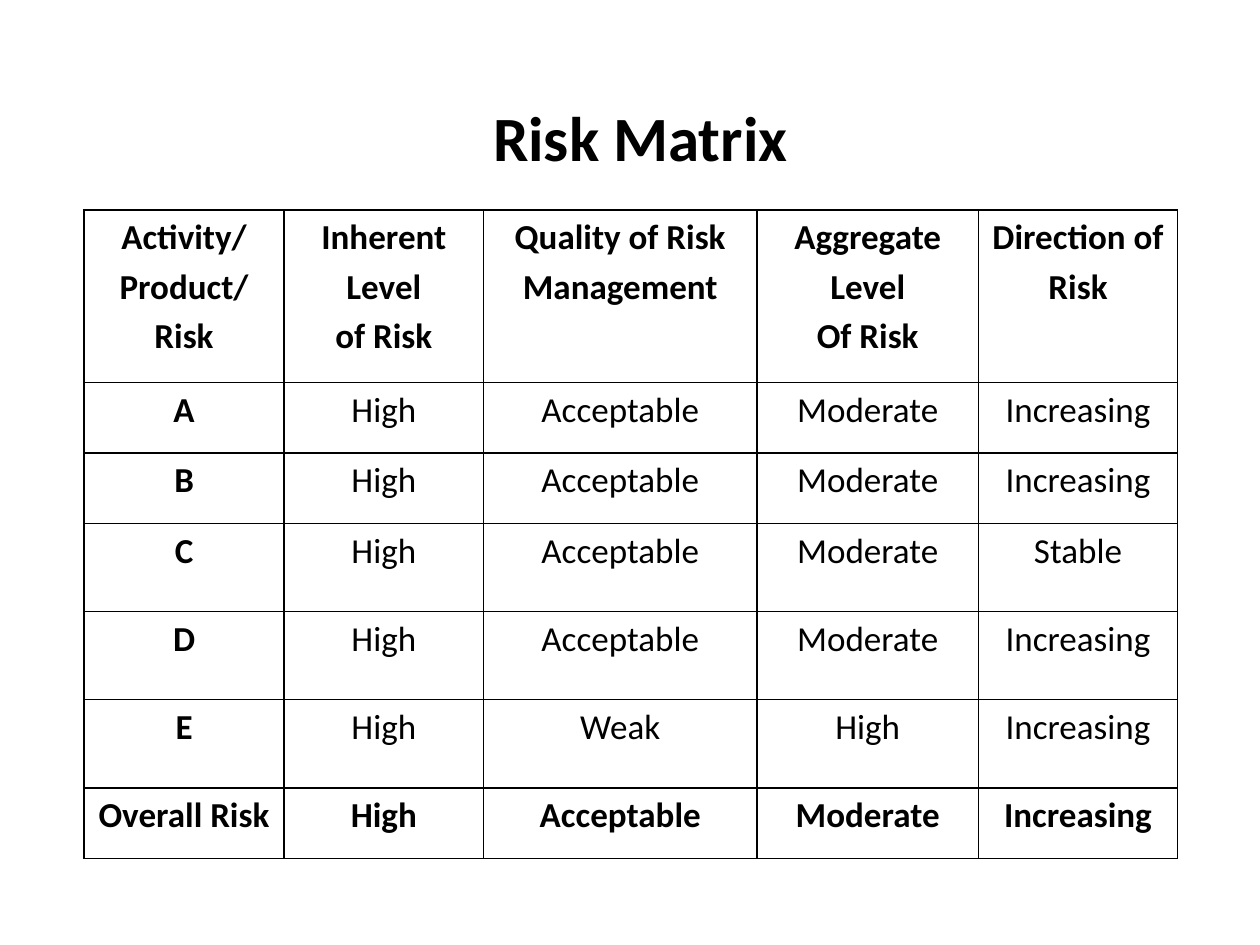
from dataclasses import dataclass

from lxml.etree import SubElement
from pptx import Presentation
from pptx.dml.color import RGBColor
from pptx.enum.text import MSO_ANCHOR, PP_ALIGN
from pptx.oxml.ns import qn
from pptx.util import Pt

COLORS = {"text": "000000", "border": "000000", "background": "FFFFFF"}
FONT = "Calibri"
COL_WIDTHS = [114.4, 114, 156.2, 126.6, 113.8]


@dataclass
class MatrixRow:
    cells: list[str]
    height: float
    bold: bool = False


ROWS = [
    MatrixRow(["Activity/\nProduct/\nRisk", "Inherent Level\nof Risk",
               "Quality of Risk Management", "Aggregate Level\nOf Risk",
               "Direction of Risk"], 98.7, True),
    MatrixRow(["A", "High", "Acceptable", "Moderate", "Increasing"], 40.2),
    MatrixRow(["B", "High", "Acceptable", "Moderate", "Increasing"], 40.2),
    MatrixRow(["C", "High", "Acceptable", "Moderate", "Stable"], 50.4),
    MatrixRow(["D", "High", "Acceptable", "Moderate", "Increasing"], 50.4),
    MatrixRow(["E", "High", "Weak", "High", "Increasing"], 50.4),
    MatrixRow(["Overall Risk", "High", "Acceptable", "Moderate", "Increasing"], 40.2, True),
]


def set_text(tf, text: str, size: float, bold: bool, spacing: float = 1) -> None:
    tf.text = text
    tf.word_wrap = True
    for p in tf.paragraphs:
        p.alignment = PP_ALIGN.CENTER
        p.line_spacing = spacing
        for r in p.runs:
            r.font.name = FONT
            r.font.size = Pt(size)
            r.font.bold = bold
            r.font.color.rgb = RGBColor.from_string(COLORS["text"])


def set_borders(cell, width: float = 1) -> None:
    tc_pr = cell._tc.get_or_add_tcPr()
    for side in ("lnL", "lnR", "lnT", "lnB"):
        ln = SubElement(tc_pr, qn(f"a:{side}"), w=str(Pt(width)))
        fill = SubElement(ln, qn("a:solidFill"))
        SubElement(fill, qn("a:srgbClr"), val=COLORS["border"])


def add_title(s, text: str) -> None:
    sp = s.shapes.add_textbox(Pt(42), Pt(48), Pt(648), Pt(60))
    sp.text_frame.vertical_anchor = MSO_ANCHOR.MIDDLE
    set_text(sp.text_frame, text, 36, True)


def add_matrix(s, rows: list[MatrixRow]) -> None:
    table = s.shapes.add_table(
        len(rows), len(COL_WIDTHS), Pt(48), Pt(120),
        Pt(sum(COL_WIDTHS)), Pt(sum(row.height for row in rows))).table
    table.horz_banding = False
    for col, width in zip(table.columns, COL_WIDTHS):
        col.width = Pt(width)
    for table_row, row in zip(table.rows, rows):
        table_row.height = Pt(row.height)
        for i, (cell, text) in enumerate(zip(table_row.cells, row.cells)):
            cell.margin_left = cell.margin_right = Pt(5)
            cell.margin_top = cell.margin_bottom = Pt(0)
            set_borders(cell)
            cell.fill.background()
            set_text(cell.text_frame, text, 20, row.bold or i == 0, 1.15)


def main() -> None:
    prs = Presentation()
    prs.slide_width, prs.slide_height = Pt(720), Pt(540)
    s = prs.slides.add_slide(prs.slide_layouts[6])
    s.background.fill.solid()
    s.background.fill.fore_color.rgb = RGBColor.from_string(COLORS["background"])
    add_title(s, "Risk Matrix")
    add_matrix(s, ROWS)
    prs.save("out.pptx")


if __name__ == "__main__":
    main()
